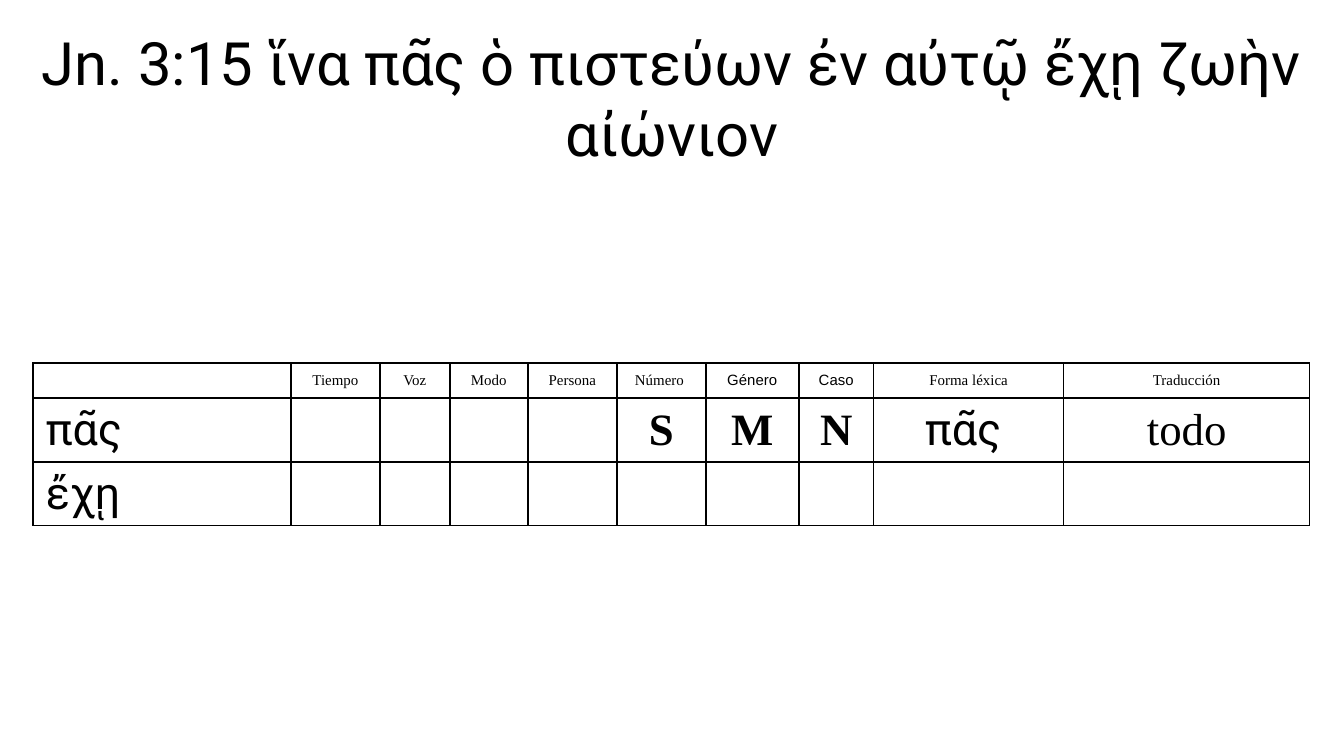
"""Build a Greek parsing slide: a verse title above a grammar table."""
from lxml import etree
from pptx import Presentation
from pptx.dml.color import RGBColor
from pptx.enum.text import MSO_ANCHOR, MSO_AUTO_SIZE, PP_ALIGN
from pptx.oxml.ns import qn
from pptx.util import Pt

MIDDLE = MSO_ANCHOR.MIDDLE
NO_AUTOFIT = MSO_AUTO_SIZE.NONE
LEFT, CENTER = PP_ALIGN.LEFT, PP_ALIGN.CENTER
BLACK = RGBColor(0, 0, 0)
SCALE = 914400 / 134.4
GREEK, SERIF, SANS = "Roboto", "Times New Roman", "Arial"

COLUMN_WIDTHS = [258, 89, 70, 78, 89, 89, 93, 75, 190, 246]
ROW_HEIGHTS = [35, 64, 64]
ROWS = [
    ["", "Tiempo", "Voz", "Modo", "Persona", "Número ", "Género", "Caso",
     "Forma léxica", "Traducción"],
    ["πᾶς", "", "", "", "", "S", "M", "N", "πᾶς ", "todo"],
    ["ἔχῃ", "", "", "", "", "", "", "", "", ""],
]
GREEK_COLUMNS = (0, 8)
SANS_HEADINGS = ("Género", "Caso")
BOLD_VALUES = ("S", "M", "N")


def px(length):
    return round(length * SCALE)


def add_span(para, text, font_name, size, bold=False):
    span = para.add_run()
    span.text = text
    span.font.name = font_name
    span.font.size = Pt(size)
    span.font.bold = bold
    span.font.color.rgb = BLACK


deck = Presentation()
deck.slide_width, deck.slide_height = px(1344), px(756)
page = deck.slides.add_slide(deck.slide_layouts[5])

title = page.shapes.title
title.left, title.top, title.width, title.height = px(22), px(18), px(1300), px(158)
title.text_frame.word_wrap = True
title.text_frame.auto_size = NO_AUTOFIT
title.text_frame.vertical_anchor = MIDDLE
verse = title.text_frame.paragraphs[0]
verse.alignment = CENTER
add_span(verse, "Jn. 3:15 ἵνα πᾶς ὁ πιστεύων ἐν αὐτῷ ἔχῃ ζωὴν αἰώνιον", GREEK, 32)

table = page.shapes.add_table(
    len(ROWS), len(COLUMN_WIDTHS), px(33), px(363),
    px(sum(COLUMN_WIDTHS)), px(sum(ROW_HEIGHTS))).table
table.first_row = False
table.horz_banding = False
for column, width in zip(table.columns, COLUMN_WIDTHS):
    column.width = px(width)
for row, height in zip(table.rows, ROW_HEIGHTS):
    row.height = px(height)

for row_index, values in enumerate(ROWS):
    for column_index, text in enumerate(values):
        cell = table.cell(row_index, column_index)
        cell.vertical_anchor = MIDDLE
        cell.margin_left = cell.margin_right = px(13)
        cell.margin_top = cell.margin_bottom = px(5)

        top_width = 1 if row_index == 0 else 0.75
        properties = cell._tc.get_or_add_tcPr()
        for edge, width in (("L", 1), ("R", 1), ("T", top_width), ("B", 0.75)):
            line = etree.SubElement(properties, qn(f"a:ln{edge}"), w=str(Pt(width)))
            fill = etree.SubElement(line, qn("a:solidFill"))
            etree.SubElement(fill, qn("a:srgbClr"), val=str(BLACK))
        cell.fill.background()

        para = cell.text_frame.paragraphs[0]
        para.alignment = LEFT if column_index == 0 else CENTER
        if not text:
            para._p.get_or_add_endParaRPr().set("sz", "800")
            continue
        if row_index == 0:
            font_name = SANS if text in SANS_HEADINGS else SERIF
        else:
            font_name = GREEK if column_index in GREEK_COLUMNS else SERIF
        size = 8 if row_index == 0 else 24
        add_span(para, text, font_name, size, text in BOLD_VALUES)

deck.save("out.pptx")
